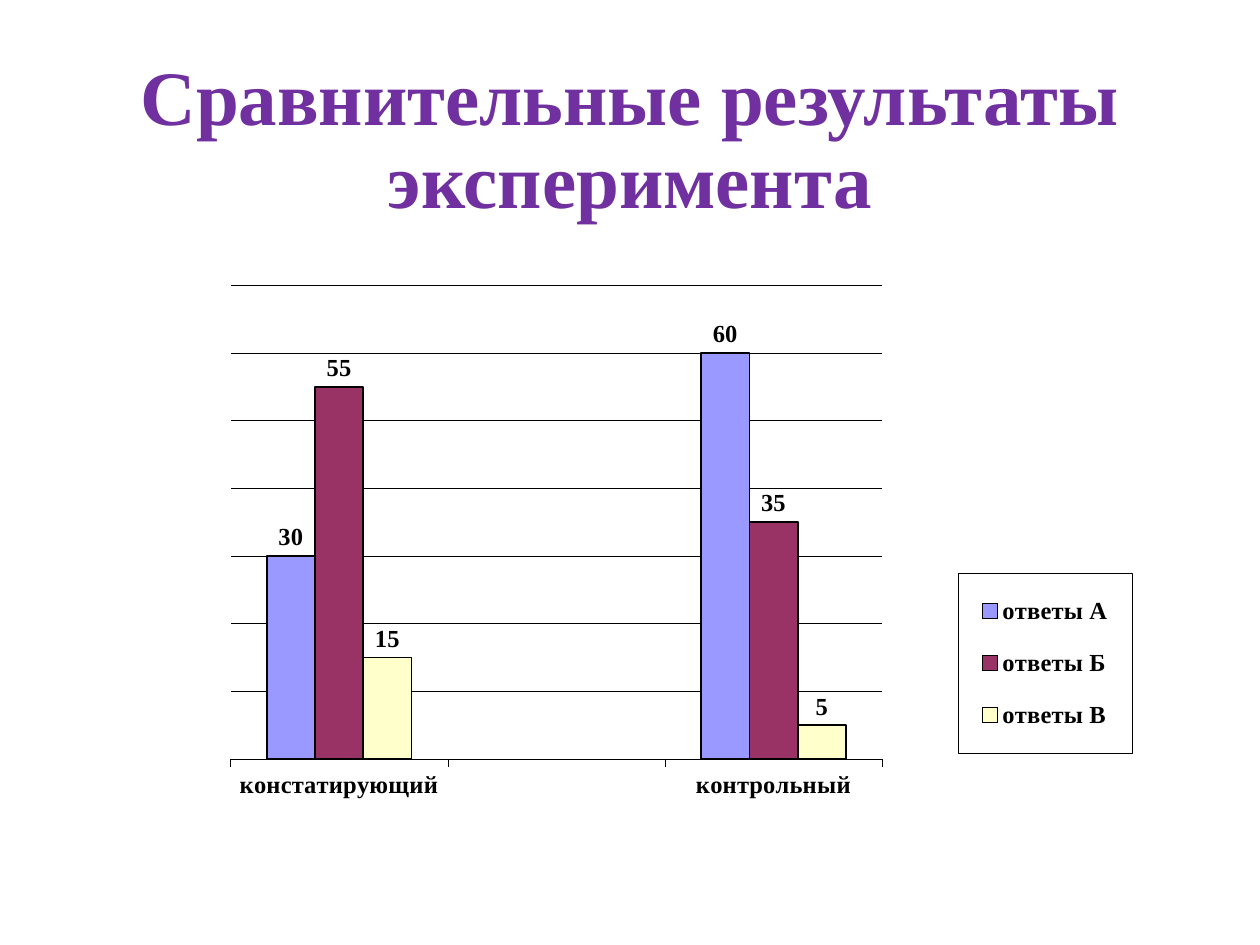
from pptx import Presentation
from pptx.chart.data import CategoryChartData
from pptx.dml.color import RGBColor
from pptx.enum.chart import (XL_CHART_TYPE, XL_LABEL_POSITION, XL_LEGEND_POSITION,
                             XL_TICK_LABEL_POSITION, XL_TICK_MARK)
from pptx.enum.text import MSO_ANCHOR, PP_ALIGN
from pptx.oxml import parse_xml
from pptx.oxml.ns import nsdecls, qn
from pptx.util import Inches, Pt

COLUMNS = XL_CHART_TYPE.COLUMN_CLUSTERED
OUTSIDE_END = XL_LABEL_POSITION.OUTSIDE_END
RIGHT = XL_LEGEND_POSITION.RIGHT
LOW = XL_TICK_LABEL_POSITION.LOW
TICK_OUT, TICK_NONE = XL_TICK_MARK.OUTSIDE, XL_TICK_MARK.NONE
MIDDLE, CENTER = MSO_ANCHOR.MIDDLE, PP_ALIGN.CENTER

WIDTH, HEIGHT = Inches(10), Inches(7.5)
FONT = "Times New Roman"
BLACK, PURPLE = "000000", "7030A0"
CATEGORIES = ["констатирующий", "", "контрольный"]
SERIES = [
    ("ответы А", (30, None, 60), "9999FF"),
    ("ответы Б", (55, None, 35), "993366"),
    ("ответы В", (15, None, 5), "FFFFCC"),
]


def rgb(value):
    """Return the colour for a hex string."""
    return RGBColor.from_string(value)


def set_font(font, size, color=BLACK):
    """Apply the slide's bold typeface at a size and colour."""
    font.name, font.size, font.bold = FONT, Pt(size), True
    font.color.rgb = rgb(color)


def set_line(line, width):
    """Draw a black line of the given width in points."""
    line.color.rgb = rgb(BLACK)
    line.width = Pt(width)


def set_layout(element, index, box, target=""):
    """Fix a chart part at a box given in shares of the chart."""
    for old in element.findall(qn("c:layout")):
        element.remove(old)
    sizes = "".join(f'<c:{tag} val="{val}"/>' for tag, val in zip("xywh", box))
    element.insert(index, parse_xml(
        f'<c:layout {nsdecls("c")}><c:manualLayout>{target}'
        '<c:xMode val="edge"/><c:yMode val="edge"/>'
        f'{sizes}</c:manualLayout></c:layout>'))


def add_title(slide, box, text):
    """Place the centred heading in its box."""
    tf = slide.shapes.add_textbox(*box).text_frame
    tf.word_wrap = True
    tf.vertical_anchor = MIDDLE
    p = tf.paragraphs[0]
    p.text = text
    p.alignment, p.line_spacing = CENTER, 0.9
    set_font(p.runs[0].font, 44, PURPLE)


def style_axes(chart):
    """Format the category axis and keep only gridlines of the value axis."""
    cat, val = chart.category_axis, chart.value_axis
    cat.tick_label_position = LOW
    cat.major_tick_mark, cat.minor_tick_mark = TICK_OUT, TICK_NONE
    set_font(cat.tick_labels.font, 14)
    set_line(cat.format.line, 0.25)
    val.visible = False
    val.minimum_scale, val.maximum_scale, val.major_unit = 0, 70, 10
    set_line(val.major_gridlines.format.line, 0.25)


def style_legend(chart):
    """Place the outlined legend at the lower right."""
    chart.has_legend = True
    legend = chart.legend
    legend.position = RIGHT
    legend.include_in_layout = False
    set_font(legend.font, 14)
    element = legend.font._element if hasattr(legend.font, "_element") else None
    element = chart._chartSpace.find(".//" + qn("c:legend"))
    set_layout(element, 1, (0.75, 0.53, 0.16, 0.3))
    element.find(qn("c:txPr")).addprevious(parse_xml(
        f'<c:spPr {nsdecls("c", "a")}><a:solidFill><a:srgbClr val="FFFFFF"/></a:solidFill>'
        f'<a:ln w="{Pt(0.25)}"><a:solidFill><a:srgbClr val="{BLACK}"/></a:solidFill></a:ln>'
        '</c:spPr>'))


def add_results_chart(slide, box):
    """Place the clustered columns of answers in their box."""
    data = CategoryChartData()
    data.categories = CATEGORIES
    for name, values, _ in SERIES:
        data.add_series(name, values)
    chart = slide.shapes.add_chart(COLUMNS, *box, data).chart
    chart.has_title = False
    set_font(chart.font, 9.5)
    chart.font.name = "Calibri"
    plot = chart.plots[0]
    plot.gap_width, plot.overlap, plot.vary_by_categories = 150, 0, False
    for series, (_, _, color) in zip(plot.series, SERIES):
        series.format.fill.solid()
        series.format.fill.fore_color.rgb = rgb(color)
        series.invert_if_negative = False
        set_line(series.format.line, 1)
        labels = series.data_labels
        labels.show_value, labels.position = True, OUTSIDE_END
        set_font(labels.font, 14)
    style_axes(chart)
    style_legend(chart)
    set_layout(chart._chartSpace.find(".//" + qn("c:plotArea")), 0,
               (0.08, 0.05, 0.6, 0.79), '<c:layoutTarget val="inner"/>')


def share(left, top, width, height):
    """Turn shares of the slide into a box."""
    return (int(left * WIDTH), int(top * HEIGHT),
            int(width * WIDTH), int(height * HEIGHT))


def main():
    """Build and save the slide."""
    prs = Presentation()
    prs.slide_width, prs.slide_height = WIDTH, HEIGHT
    slide = prs.slides.add_slide(prs.slide_layouts[6])
    add_title(slide, share(0.07, 0.05, 0.86, 0.2),
              "Сравнительные результаты эксперимента")
    add_results_chart(slide, share(0.114, 0.27, 0.862, 0.635))
    prs.save("out.pptx")


if __name__ == "__main__":
    main()
